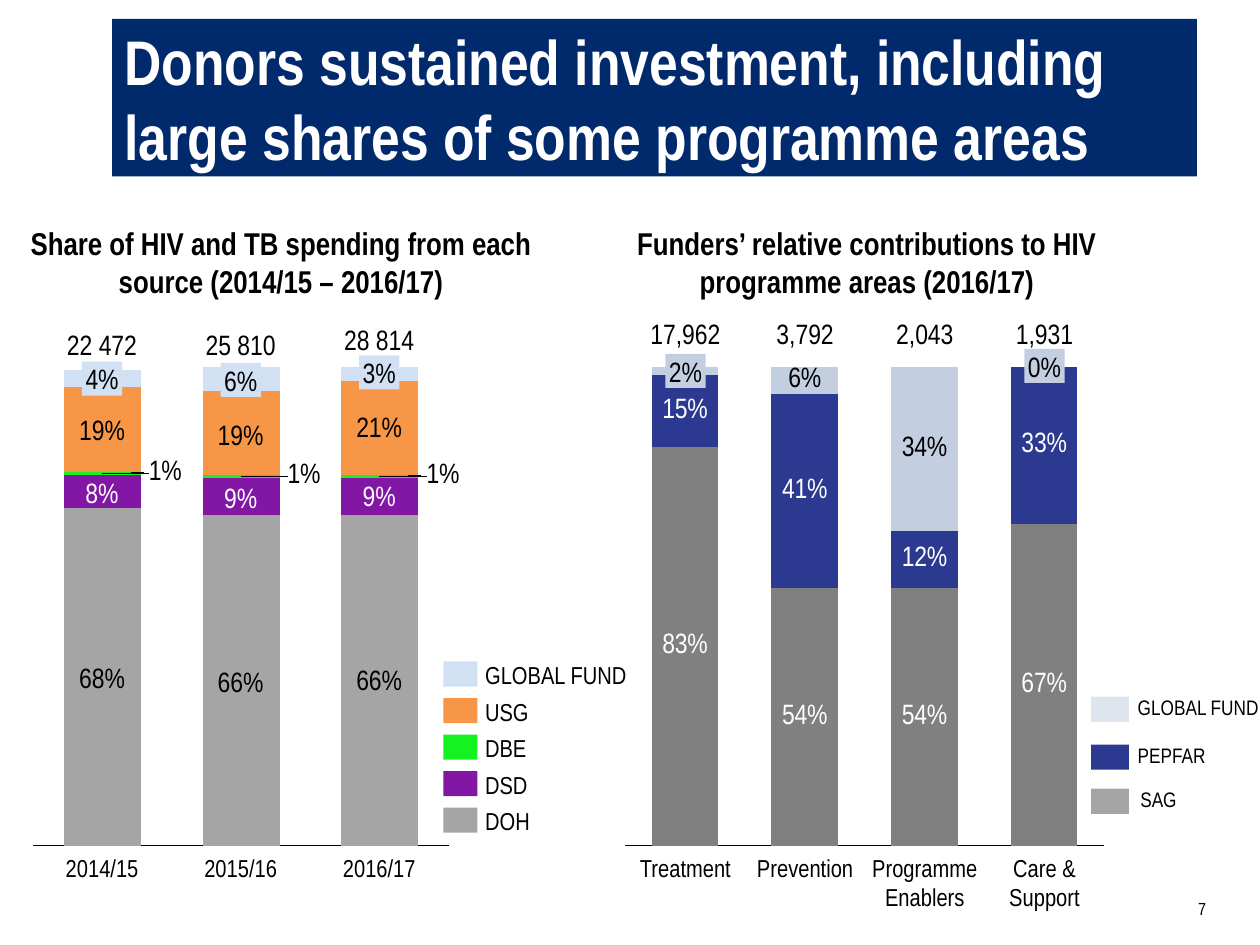
from lxml.etree import SubElement
from pptx import Presentation
from pptx.chart.data import CategoryChartData
from pptx.dml.color import RGBColor
from pptx.enum.chart import XL_CHART_TYPE, XL_TICK_LABEL_POSITION, XL_TICK_MARK
from pptx.enum.shapes import MSO_CONNECTOR, MSO_SHAPE
from pptx.enum.text import MSO_ANCHOR, PP_ALIGN
from pptx.oxml import parse_xml
from pptx.oxml.ns import nsdecls, qn
from pptx.util import Inches, Pt

FONT = "Arial Narrow"
PERCENT = '[<2]"";0"%"'


def color(hex_value):
    return RGBColor.from_string(hex_value)


def add_text(text, left, top, width, height, size=16, font_color="000000", fill=None, bold=False,
             align=PP_ALIGN.CENTER, anchor=MSO_ANCHOR.MIDDLE, inset=0.0, inset_y=0.0, wrap=False):
    box = (Inches(left), Inches(top), Inches(width), Inches(height))
    if fill:
        shape = slide.shapes.add_shape(MSO_SHAPE.RECTANGLE, *box)
        shape.shadow.inherit = False
        shape.fill.solid()
        shape.fill.fore_color.rgb = color(fill)
        shape.line.fill.background()
    else:
        shape = slide.shapes.add_textbox(*box)
    frame = shape.text_frame
    frame.word_wrap = wrap
    frame.vertical_anchor = anchor
    frame.margin_left = frame.margin_right = Inches(inset)
    frame.margin_top = frame.margin_bottom = Inches(inset_y)
    paragraph = frame.paragraphs[0]
    paragraph.alignment = align
    if text:
        run = paragraph.add_run()
        run.text = text
        run.font.name = FONT
        run.font.size = Pt(size)
        run.font.bold = bold
        run.font.color.rgb = color(font_color)


presentation = Presentation()
presentation.slide_width = Inches(10)
presentation.slide_height = Inches(7.5)
slide = presentation.slides.add_slide(presentation.slide_layouts[6])

add_text("Donors sustained investment, including large shares of some programme areas",
         0.89, 0.15, 8.61, 1.25, size=36, font_color="FFFFFF", fill="002A6C", bold=True,
         align=PP_ALIGN.LEFT, inset=0.1, inset_y=0.05, wrap=True)
for heading, left in [
    ("Share of HIV and TB spending from each source (2014/15 – 2016/17)", 0.02),
    ("Funders’ relative contributions to HIV programme areas (2016/17)", 4.67),
]:
    add_text(heading, left, 1.73, 4.42, 0.7, size=18, bold=True, anchor=MSO_ANCHOR.BOTTOM,
             inset=0.1, inset_y=0.05, wrap=True)

spending_series = [
    ("DOH", [100, 98, 98], "A5A5A5", None),
    ("DSD", [10, 11, 11], "8216A5", None),
    ("DBE", [0.91, 0.84, 0.8], "14F320", None),
    ("USG", [25, 25, 28], "F79646", None),
    ("GLOBAL FUND", [5, 8, 4], "D1E0F3", None),
]
funder_series = [
    ("SAG", [83.29, 53.73, 53.78, 67.13], "808080", "FFFFFF"),
    ("PEPFAR", [14.93, 40.64, 11.95, 32.87], "2B3990", "FFFFFF"),
    ("GLOBAL FUND", [1.77, 5.64, 34.26, 0], "C3CFE1", "000000"),
]
years = ["2014/15", "2015/16", "2016/17"]
areas = ["Treatment", "Prevention", "Programme Enablers", "Care & Support"]

for left, width, maximum, plot_left, plot_width, categories, series_rows in [
    (0.17, 3.52, 142, 0.026, 0.939, years, spending_series),
    (4.87, 3.98, 100, 0.023, 0.955, areas, funder_series),
]:
    chart_data = CategoryChartData()
    chart_data.categories = categories
    for name, values, _, _ in series_rows:
        chart_data.add_series(name, values)
    chart = slide.shapes.add_chart(XL_CHART_TYPE.COLUMN_STACKED, Inches(left), Inches(2.82),
                                   Inches(width), Inches(3.98), chart_data).chart
    chart.has_title = False
    chart.has_legend = False
    chart.font.name = FONT
    chart.font.size = Pt(10)
    chart.font.color.rgb = color("000000")
    chart.value_axis.minimum_scale = 0
    chart.value_axis.maximum_scale = maximum
    chart.value_axis.has_major_gridlines = False
    chart.value_axis.visible = False
    category_axis = chart.category_axis
    category_axis.tick_label_position = XL_TICK_LABEL_POSITION.NONE
    category_axis.major_tick_mark = XL_TICK_MARK.NONE
    category_axis.format.line.color.rgb = color("000000")
    category_axis.format.line.width = Pt(0.75)
    plot = chart.plots[0]
    plot.gap_width = 80
    plot.overlap = 100
    plot.vary_by_categories = False

    plot_area = chart.element.find(".//" + qn("c:plotArea"))
    for layout in plot_area.findall(qn("c:layout")):
        plot_area.remove(layout)
    plot_area.insert(0, parse_xml(
        f'<c:layout {nsdecls("c")}><c:manualLayout><c:layoutTarget val="inner"/>'
        '<c:xMode val="edge"/><c:yMode val="edge"/>'
        f'<c:x val="{plot_left}"/><c:y val="0.023"/>'
        f'<c:w val="{plot_width}"/><c:h val="0.955"/></c:manualLayout></c:layout>'))

    for series, (name, values, fill, label_color) in zip(plot.series, series_rows):
        series.format.fill.solid()
        series.format.fill.fore_color.rgb = color(fill)
        if label_color:
            labels = series.data_labels
            labels.show_value = True
            labels.number_format = PERCENT
            labels.number_format_is_linked = False
            labels.font.name = FONT
            labels.font.size = Pt(16)
            labels.font.color.rgb = color(label_color)
        if name == "DBE":
            for index in range(len(values)):
                font = series.points[index].data_label.font
                font.name = FONT
                font.size = Pt(16)
                font.color.rgb = color("000000")
            for label in series.data_labels._element.findall(qn("c:dLbl")):
                label.insert(1, parse_xml(
                    f'<c:layout {nsdecls("c")}><c:manualLayout><c:x val="0.142"/>'
                    '<c:y val="0"/></c:manualLayout></c:layout>'))
                label.insert(2, parse_xml(
                    f'<c:numFmt {nsdecls("c")} formatCode="0&quot;%&quot;" sourceLinked="0"/>'))

year_centers = [0.81 + 1.1 * index for index in range(3)]
area_centers = [5.44 + 0.95 * index for index in range(4)]

for center, top in zip(year_centers, [3.75, 3.78, 3.77]):
    leader = slide.shapes.add_connector(MSO_CONNECTOR.STRAIGHT, Inches(center + 0.33), Inches(top),
                                        Inches(center + 0.23), Inches(top))
    leader.line.color.rgb = color("000000")
    leader.line.width = Pt(0.5)
    SubElement(leader._element.spPr, qn("a:effectLst"))

for texts, tops, width, font_color, fill in [
    (["22 472", "25 810", "28 814"], [2.6, 2.6, 2.56], 0.7, "000000", None),
    (["4%", "6%", "3%"], [2.87, 2.88, 2.82], 0.32, "000000", "D1E0F3"),
    (["19%", "19%", "21%"], [3.27, 3.31, 3.25], 0.5, "000000", None),
    (["8%", "9%", "9%"], [3.77, 3.81, 3.8], 0.5, "FFFFFF", None),
    (["68%", "66%", "66%"], [5.24, 5.27, 5.26], 0.5, "000000", None),
]:
    for text, center, top in zip(texts, year_centers, tops):
        add_text(text, center - width / 2, top, width, 0.27, font_color=font_color, fill=fill, inset=0.03)

for total, center in zip(["17,962", "3,792", "2,043", "1,931"], area_centers):
    add_text(total, center - 0.35, 2.51, 0.7, 0.27, anchor=MSO_ANCHOR.BOTTOM, inset=0.03)
for text, center, top in [("2%", area_centers[0], 2.81), ("0%", area_centers[3], 2.77)]:
    add_text(text, center - 0.16, top, 0.32, 0.27, fill="C3CFE1", inset=0.03)

for text, center, width in zip(years + areas, year_centers + area_centers,
                               [0.65, 0.65, 0.65, 0.8, 0.85, 0.87, 0.6]):
    wrap = " " in text
    add_text(text, center - width / 2, 6.77, width, 0.47 if wrap else 0.23, size=14,
             anchor=MSO_ANCHOR.TOP, wrap=wrap)

for index, (name, _, fill, _) in enumerate(reversed(spending_series)):
    top = 5.25 + 0.29 * index
    add_text("", 3.52, top, 0.27, 0.2, fill=fill)
    add_text(name, 3.85, top - 0.01, 1.25, 0.23, size=14, align=PP_ALIGN.LEFT)

for name, fill, top, left in [
    ("GLOBAL FUND", "DFE5EF", 5.53, 9.03),
    ("PEPFAR", "2B3990", 5.91, 9.03),
    ("SAG", "A5A5A5", 6.26, 9.05),
]:
    add_text("", 8.66, top, 0.3, 0.2, fill=fill)
    add_text(name, left, top - 0.02, 10 - left, 0.2, size=12, align=PP_ALIGN.LEFT)

add_text("7", 7.17, 7.08, 2.5, 0.25, size=10, align=PP_ALIGN.RIGHT, anchor=MSO_ANCHOR.TOP,
         inset=0.1, inset_y=0.05)

presentation.save("out.pptx")
